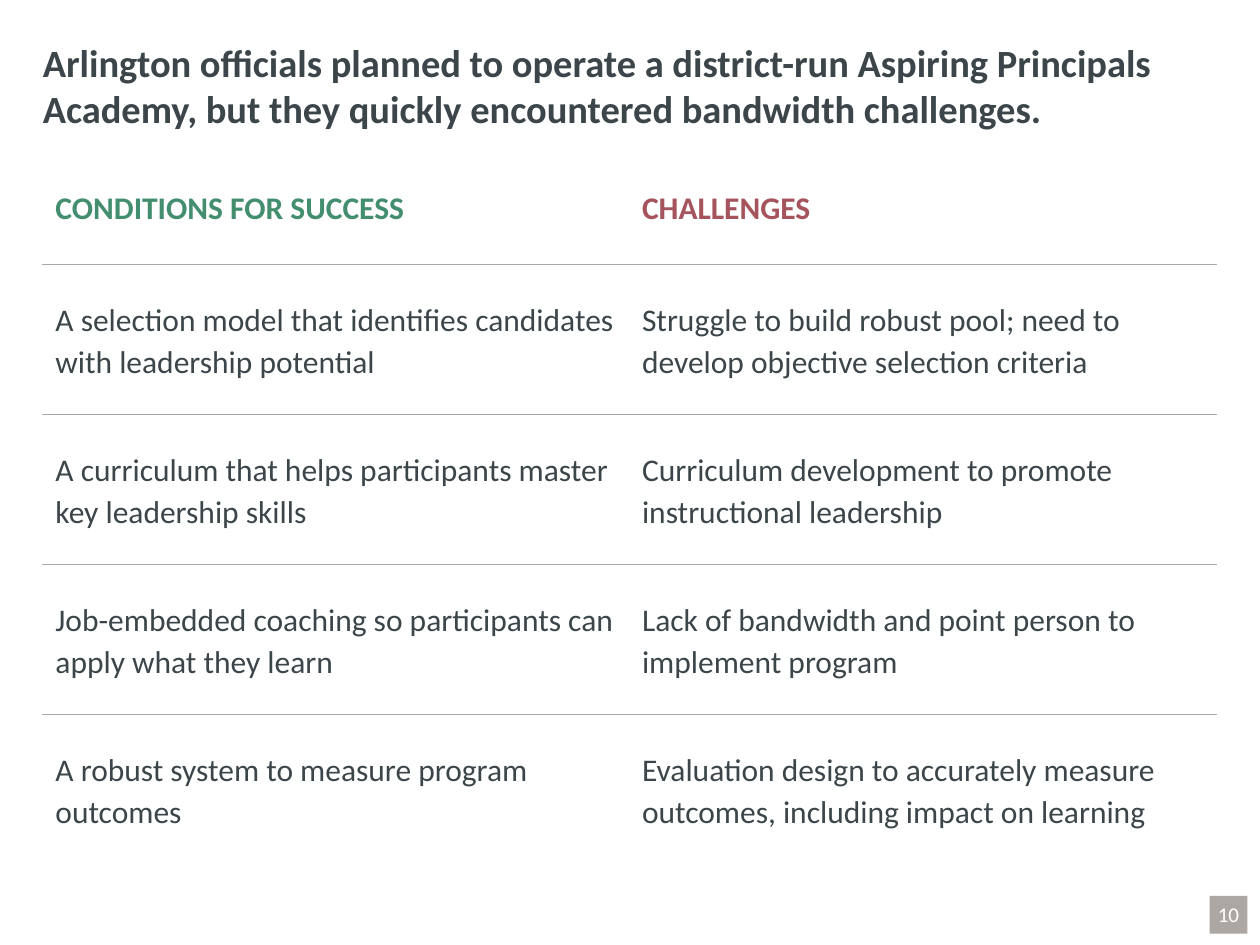
from lxml.etree import SubElement
from pptx import Presentation
from pptx.dml.color import RGBColor
from pptx.enum.shapes import MSO_SHAPE as Shape
from pptx.enum.text import MSO_ANCHOR as Anchor, PP_ALIGN as Align
from pptx.oxml.ns import qn
from pptx.util import Pt

INK, GREEN, RED = "3C464A", "438E6E", "A5535D"
WHITE, RULE, BADGE = "FFFFFF", "AEA8A4", "ADA7A4"

HEADINGS = [("CONDITIONS FOR SUCCESS", GREEN), ("CHALLENGES", RED)]
FINDINGS = [
    ("A selection model that identifies candidates with leadership potential",
     "Struggle to build robust pool; need to develop objective selection criteria"),
    ("A curriculum that helps participants master key leadership skills",
     "Curriculum development to promote instructional leadership"),
    ("Job-embedded coaching so participants can apply what they learn",
     "Lack of bandwidth and point person to implement program"),
    ("A robust system to measure program outcomes",
     "Evaluation design to accurately measure outcomes, including impact on learning"),
]


def rgb(color):
    return RGBColor.from_string(color)


def write(frame, text, color, size, bold=False, **paragraph_format):
    paragraph = frame.paragraphs[0]
    for name, value in paragraph_format.items():
        setattr(paragraph, name, value)
    run = paragraph.add_run()
    run.text = text
    for name, value in {"name": "Calibri", "size": Pt(size), "bold": bold}.items():
        setattr(run.font, name, value)
    run.font.color.rgb = rgb(color)


def add_text(slide, box, *content, margins=None, **paragraph_format):
    frame = slide.shapes.add_textbox(*map(Pt, box)).text_frame
    frame.word_wrap = True
    for name, value in (margins or {}).items():
        setattr(frame, name, Pt(value))
    write(frame, *content, **paragraph_format)


def set_borders(cell, top, bottom):
    properties = cell._tc.get_or_add_tcPr()
    sides = {"lnL": WHITE, "lnR": WHITE, "lnT": top, "lnB": bottom}
    for position, (side, color) in enumerate(sides.items()):
        line = SubElement(properties, qn(f"a:{side}"), w=str(Pt(1)))
        fill = SubElement(line, qn("a:solidFill"))
        SubElement(fill, qn("a:srgbClr"), val=color)
        properties.insert(position, line)


def add_title(slide, box):
    add_text(slide, box,
             "Arlington officials planned to operate a district-run Aspiring "
             "Principals Academy, but they quickly encountered bandwidth challenges.",
             INK, 22, True, margins={"margin_left": 0})


def add_findings(slide, box, heading_height):
    left, top, width, height = box
    row_count = len(FINDINGS) + 1
    table = slide.shapes.add_table(row_count, len(HEADINGS), *map(Pt, box)).table
    for flag in ("first_row", "horz_banding"):
        setattr(table, flag, False)
    for column in table.columns:
        column.width = Pt(width / len(HEADINGS))
    for index, row in enumerate(table.rows):
        row.height = Pt((height - heading_height) / len(FINDINGS) if index else heading_height)

    # Headings
    for cell, (heading, color) in zip(table.rows[0].cells, HEADINGS):
        write(cell.text_frame, heading, color, 18, True)

    # Conditions and the challenge each one met
    for index, pair in enumerate(FINDINGS, 1):
        for cell, finding in zip(table.rows[index].cells, pair):
            cell.vertical_anchor = Anchor.MIDDLE
            write(cell.text_frame, finding, INK, 18, line_spacing=1.1)

    # Rules between rows only
    for index, row in enumerate(table.rows):
        for cell in row.cells:
            cell.fill.background()
            set_borders(cell, RULE if index else WHITE,
                        RULE if index < row_count - 1 else WHITE)


def add_page_number(slide, box, number):
    left, top, width, height = box
    badge = slide.shapes.add_shape(Shape.RECTANGLE, *map(Pt, box))
    badge.shadow.inherit = False
    badge.fill.solid()
    badge.fill.fore_color.rgb = rgb(BADGE)
    badge.line.fill.background()
    overhang = 7.2
    add_text(slide, (left - overhang, top, width + 2 * overhang, height),
             number, WHITE, 12, alignment=Align.CENTER)


def main():
    deck = Presentation()
    deck.slide_width, deck.slide_height = Pt(720), Pt(540)
    slide = deck.slides.add_slide(deck.slide_layouts[6])
    add_page_number(slide, (691.2, 511.9, 21.6, 21.6), "10")
    add_title(slide, (24.5, 18.7, 670.4, 33.8))
    add_findings(slide, (24.5, 104.4, 670.4, 389.6), 46.8)
    deck.save("out.pptx")


if __name__ == "__main__":
    main()
